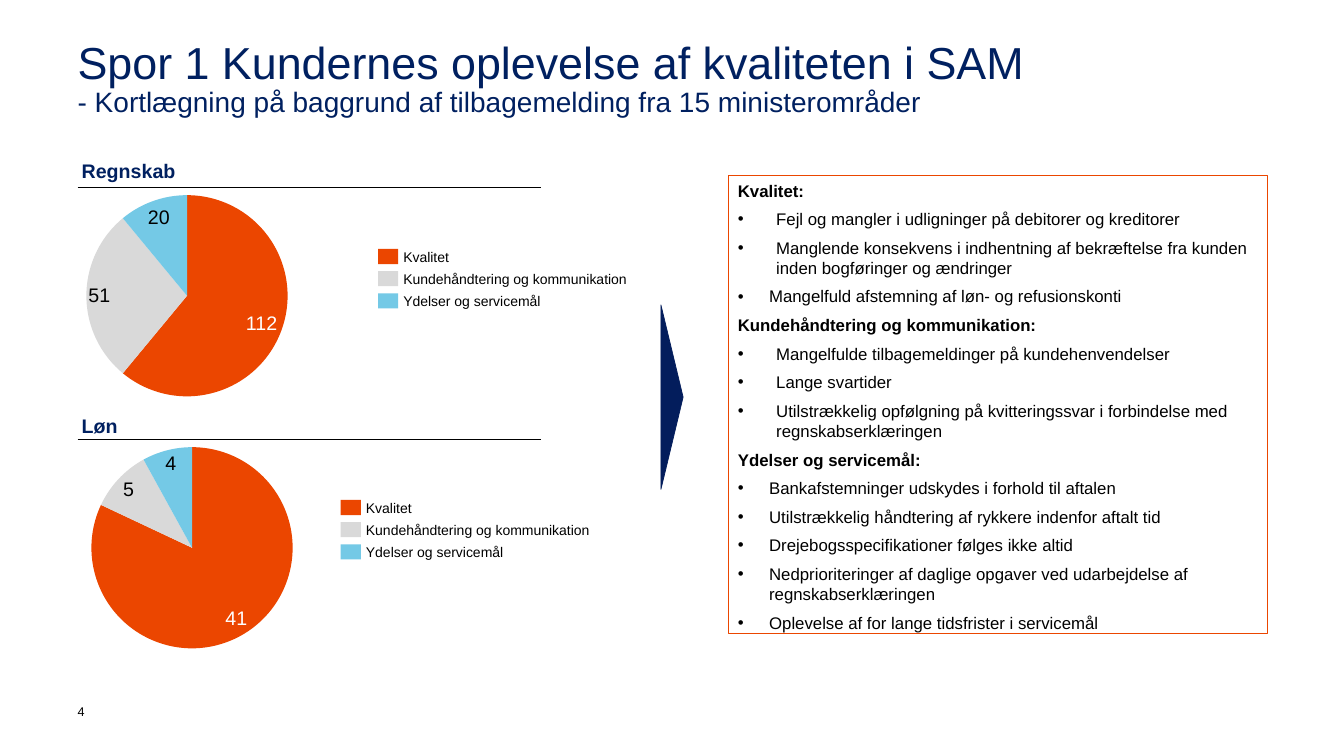
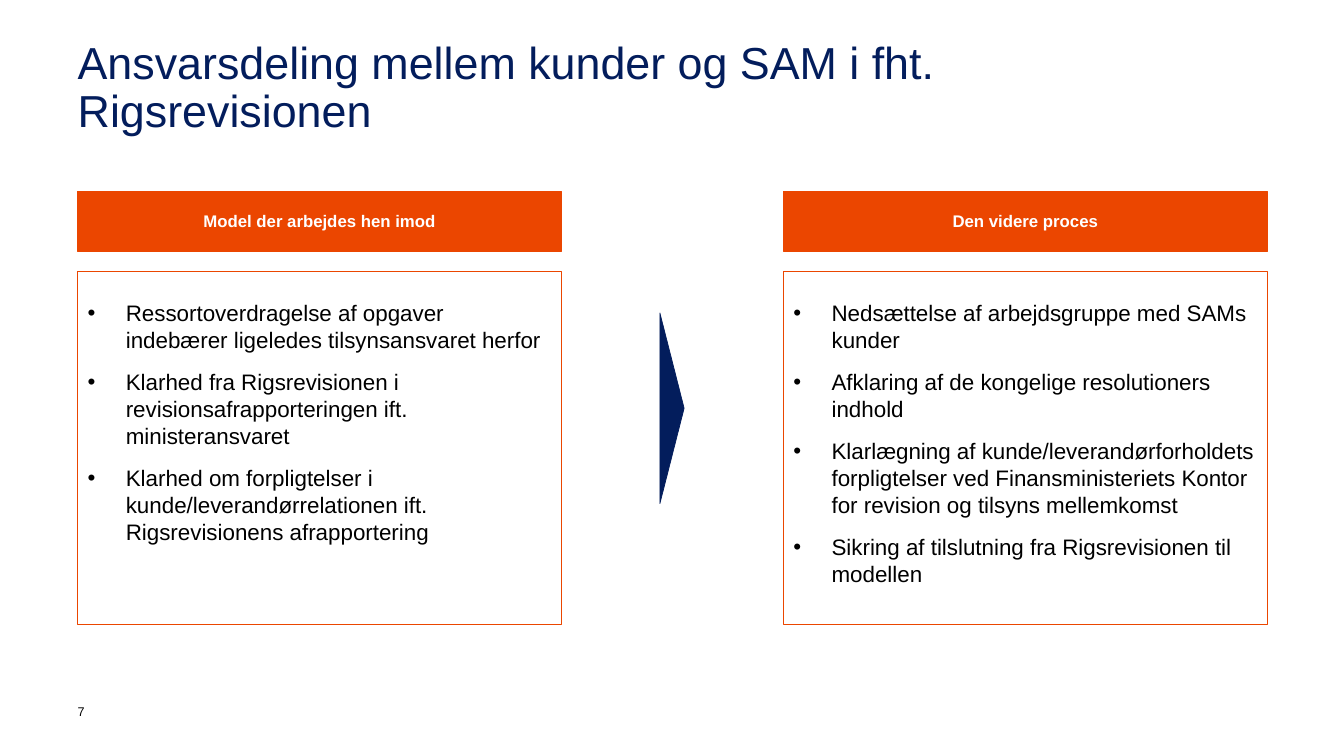
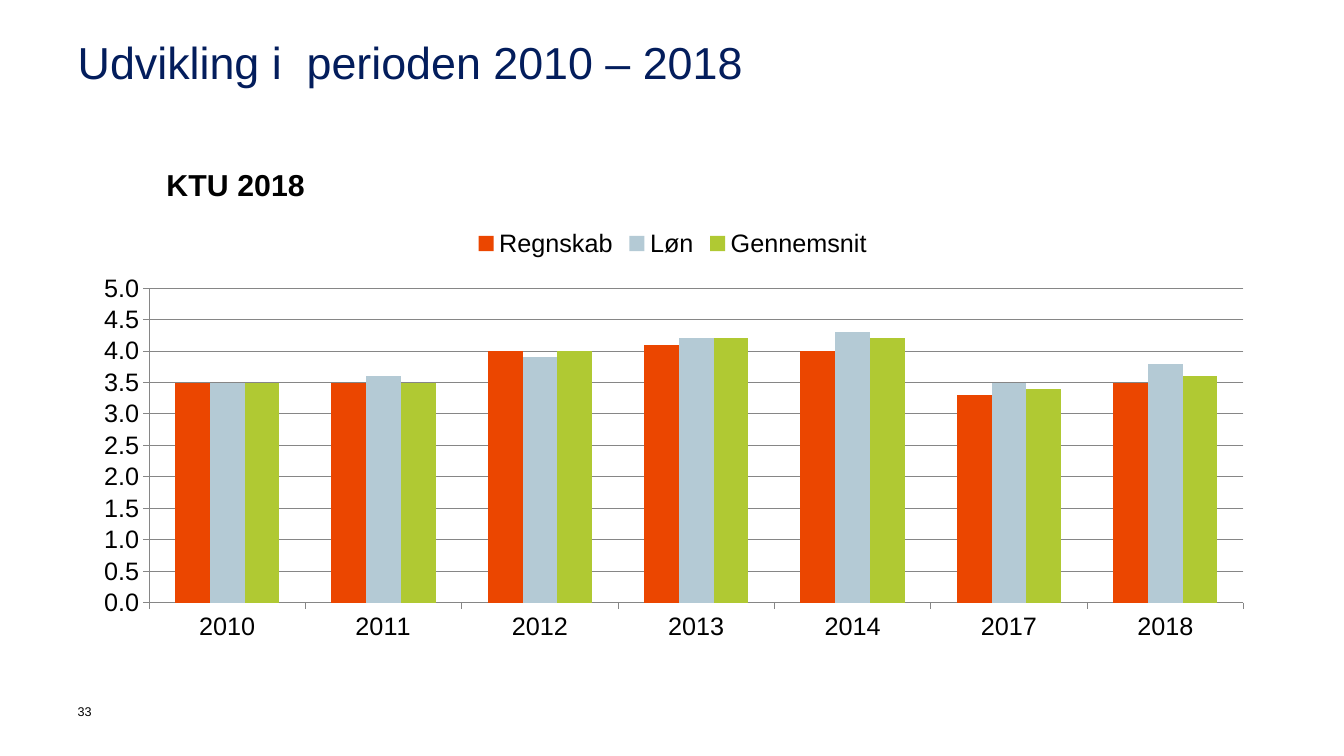
import pptx
import pptx.chart.data
import pptx.dml.color
import pptx.enum.chart
import pptx.enum.shapes
import pptx.enum.text
import pptx.oxml
import pptx.oxml.ns
import pptx.util
from lxml import etree

THEME = {
    "font": "Arial",
    "navy": "031D5C", "heading": "002060", "orange": "EB4600", "grey": "D9D9D9",
    "sky": "74C9E6", "steel": "B4CAD5", "green": "B0C933", "grid": "868686",
    "black": "000000", "white": "FFFFFF",
    "title": 32, "subtitle": 20, "chart_title": 21.6, "chart": 18, "body": 16,
    "label": 14, "panel": 12, "legend": 10, "number": 9, "hairline": 0.5,
}
SLIDE_W, SLIDE_H = 13.33, 7.5
LEFT, CONTENT_W = 0.77, 11.8
RIGHT = LEFT + CONTENT_W
COLUMN_W = 4.8
PIE_SIZE = 2.17
LEGEND_PITCH = 0.22
WIDE, NARROW = 0.38, 0.31

QUALITY = {
    "number": "4",
    "title": "Spor 1 Kundernes oplevelse af kvaliteten i SAM",
    "subtitle": "- Kortlægning på baggrund af tilbagemelding fra 15 ministerområder",
    "legend": [("Kvalitet", "orange"), ("Kundehåndtering og kommunikation", "grey"),
               ("Ydelser og servicemål", "sky")],
    "pies": [
        {"name": "Regnskab", "name_y": 1.58, "rule_y": 1.86, "at": (0.77, 1.85),
         "legend_at": (3.75, 2.47), "shares": (61, 28, 11),
         "labels": [("112", 0.74, 0.27, "white"), ("51", -0.87, -0.01, "black"),
                    ("20", -0.28, -0.79, "black")]},
        {"name": "Løn", "name_y": 4.11, "rule_y": 4.36, "at": (0.82, 4.35),
         "legend_at": (3.38, 4.96), "shares": (82, 10, 8),
         "labels": [("41", 0.44, 0.69, "white"), ("5", -0.63, -0.59, "black"),
                    ("4", -0.21, -0.84, "black")]},
    ],
    "findings": [
        ("Kvalitet:", [
            (WIDE, "Fejl og mangler i udligninger på debitorer og kreditorer"),
            (WIDE, "Manglende konsekvens i indhentning af bekræftelse fra kunden inden bogføringer og ændringer"),
            (NARROW, "Mangelfuld afstemning af løn- og refusionskonti")]),
        ("Kundehåndtering og kommunikation:", [
            (WIDE, "Mangelfulde tilbagemeldinger på kundehenvendelser"),
            (WIDE, "Lange svartider"),
            (WIDE, "Utilstrækkelig opfølgning på kvitteringssvar i forbindelse med regnskabserklæringen")]),
        ("Ydelser og servicemål:", [
            (NARROW, "Bankafstemninger udskydes i forhold til aftalen"),
            (NARROW, "Utilstrækkelig håndtering af rykkere indenfor aftalt tid"),
            (NARROW, "Drejebogsspecifikationer følges ikke altid"),
            (NARROW, "Nedprioriteringer af daglige opgaver ved udarbejdelse af regnskabserklæringen"),
            (NARROW, "Oplevelse af for lange tidsfrister i servicemål")]),
    ],
}
RESPONSIBILITY = {
    "number": "7",
    "title": "Ansvarsdeling mellem kunder og SAM i fht. Rigsrevisionen",
    "columns": [
        ("Model der arbejdes hen imod", [
            "Ressortoverdragelse af opgaver indebærer ligeledes tilsynsansvaret herfor",
            "Klarhed fra Rigsrevisionen i revisionsafrapporteringen ift. ministeransvaret",
            "Klarhed om forpligtelser i kunde/leverandørrelationen ift. Rigsrevisionens afrapportering"]),
        ("Den videre proces", [
            "Nedsættelse af arbejdsgruppe med SAMs kunder",
            "Afklaring af de kongelige resolutioners indhold",
            "Klarlægning af kunde/leverandørforholdets forpligtelser ved Finansministeriets Kontor for revision og tilsyns mellemkomst",
            "Sikring af tilslutning fra Rigsrevisionen til modellen"]),
    ],
}
TREND = {
    "number": "33",
    "title": "Udvikling i  perioden 2010 – 2018",
    "chart_title": "KTU 2018",
    "years": ["2010", "2011", "2012", "2013", "2014", "2017", "2018"],
    "series": [
        ("Regnskab", "orange", (3.5, 3.5, 4, 4.1, 4, 3.3, 3.5)),
        ("Løn", "steel", (3.5, 3.6, 3.9, 4.2, 4.3, 3.5, 3.8)),
        ("Gennemsnit", "green", (3.5, 3.5, 4, 4.2, 4.2, 3.4, 3.6)),
    ],
}

ALIGN = pptx.enum.text.PP_ALIGN
ANCHOR = pptx.enum.text.MSO_ANCHOR
SHAPE = pptx.enum.shapes.MSO_SHAPE
CHART = pptx.enum.chart.XL_CHART_TYPE
qn = pptx.oxml.ns.qn


def inches(*values):
    return [pptx.util.Inches(v) for v in values]


def rgb(name):
    return pptx.dml.color.RGBColor.from_string(THEME[name])


def set_font(font, size, color="black", bold=False):
    font.name = THEME["font"]
    font.size = pptx.util.Pt(THEME[size])
    font.bold = bold
    font.color.rgb = rgb(color)


def write(tf, paragraphs, size="body", color="black", bold=False, align=ALIGN.LEFT,
          anchor=ANCHOR.TOP, insets=(0, 0, 0, 0), space=0, hang=0):
    tf.word_wrap = True
    tf.vertical_anchor = anchor
    tf.margin_left, tf.margin_top, tf.margin_right, tf.margin_bottom = inches(*insets)
    for i, item in enumerate(paragraphs):
        text, own = item if isinstance(item, tuple) else (item, {})
        p = tf.paragraphs[0] if i == 0 else tf.add_paragraph()
        p.alignment = align
        if i and space:
            p.space_before = pptx.util.Pt(space)
        indent = own.get("hang", hang)
        if indent:
            pPr = p._p.get_or_add_pPr()
            pPr.set("marL", str(pptx.util.Inches(indent)))
            pPr.set("indent", str(-pptx.util.Inches(indent)))
            etree.SubElement(pPr, qn("a:buFont"), typeface=THEME["font"])
            etree.SubElement(pPr, qn("a:buChar"), char="•")
        r = p.add_run()
        r.text = text
        set_font(r.font, size, color, own.get("bold", bold))


def add_text(s, box, text, **fmt):
    write(s.shapes.add_textbox(*inches(*box)).text_frame, [text], **fmt)


def add_box(s, box, fill=None, line=None, kind=SHAPE.RECTANGLE):
    sp = s.shapes.add_shape(kind, *inches(*box))
    sp.shadow.inherit = False
    if fill:
        sp.fill.solid()
        sp.fill.fore_color.rgb = rgb(fill)
    else:
        sp.fill.background()
    if line:
        sp.line.color.rgb = rgb(line)
        sp.line.width = pptx.util.Pt(THEME["hairline"])
    else:
        sp.line.fill.background()
    return sp


def add_rule(s, x, y, width):
    cx = s.shapes.add_connector(pptx.enum.shapes.MSO_CONNECTOR.STRAIGHT,
                                *inches(x, y, x + width, y))
    cx.line.color.rgb = rgb("black")
    cx.line.width = pptx.util.Pt(THEME["hairline"])
    etree.SubElement(cx._element.spPr, qn("a:effectLst"))


def add_pointer(s, center_y, length, depth):
    box = (SLIDE_W / 2 - length / 2, center_y - depth / 2, length, depth)
    sp = add_box(s, box, "navy", "navy", SHAPE.ISOSCELES_TRIANGLE)
    sp.rotation = 90


def place(element, index, **shares):
    layout = element.find(qn("c:layout"))
    if layout is None:
        layout = etree.Element(qn("c:layout"))
        element.insert(index, layout)
    manual = etree.SubElement(layout, qn("c:manualLayout"))
    if "w" in shares:
        etree.SubElement(manual, qn("c:layoutTarget"), val="inner")
    for side in "xy":
        etree.SubElement(manual, qn(f"c:{side}Mode"), val="edge")
    for side, share in shares.items():
        etree.SubElement(manual, qn(f"c:{side}"), val=str(share))


def add_chart(s, kind, box, categories, series, size):
    data = pptx.chart.data.CategoryChartData()
    data.categories = categories
    for name, values in series:
        data.add_series(name, values)
    chart = s.shapes.add_chart(kind, *inches(*box), data).chart
    chart.has_title = False
    chart.has_legend = False
    set_font(chart.font, size)
    return chart


def paint(part, color):
    part.format.fill.solid()
    part.format.fill.fore_color.rgb = rgb(color)


def new_slide(prs, content, color="navy"):
    s = prs.slides.add_slide(prs.slide_layouts[5])
    title = s.shapes.title
    title.left, title.top, title.width, title.height = inches(LEFT, 0.4, CONTENT_W, 1.02)
    tf = title.text_frame
    write(tf, [content["title"]], size="title", color=color, insets=(0, 0, 1.13, 0))
    tf.auto_size = pptx.enum.text.MSO_AUTO_SIZE.NONE
    p = tf.paragraphs[0]
    p.line_spacing = 0.9
    if "subtitle" in content:
        p.add_line_break()
        etree.SubElement(p._p[-1], qn("a:rPr"), sz=str(THEME["title"] * 100))
        r = p.add_run()
        r.text = content["subtitle"]
        set_font(r.font, "subtitle", color)
    add_text(s, (LEFT, 6.98, 0.31, 0.39), content["number"], size="number")
    return s


def add_pie(s, pie, legend):
    x, y = pie["at"]
    add_text(s, (LEFT + 0.04, pie["name_y"], 2, 0.24), pie["name"],
             size="label", color="heading", bold=True)
    add_rule(s, LEFT, pie["rule_y"], 4.6)
    chart = add_chart(s, CHART.PIE, (x, y, PIE_SIZE, PIE_SIZE), ["1", "2", "3"],
                      [("Series 1", pie["shares"])], "legend")
    place(chart._chartSpace.chart.plotArea, 0, x=0.04, y=0.04, w=0.92, h=0.92)
    points = chart.plots[0].series[0].points
    legend_x, legend_y = pie["legend_at"]
    for i, (name, color) in enumerate(legend):
        paint(points[i], color)
        row_y = legend_y + i * LEGEND_PITCH
        add_box(s, (legend_x, row_y, 0.2, 0.15), color)
        add_text(s, (legend_x + 0.25, row_y - 0.01, 2.5, 0.17), name,
                 size="legend", anchor=ANCHOR.MIDDLE)
    w, h = 0.5, 0.23
    for text, dx, dy, color in pie["labels"]:
        box = (x + PIE_SIZE / 2 + dx - w / 2, y + PIE_SIZE / 2 + dy - h / 2, w, h)
        add_text(s, box, text, size="label", color=color, align=ALIGN.CENTER,
                 anchor=ANCHOR.MIDDLE)


def quality_slide(prs):
    s = new_slide(prs, QUALITY, "heading")
    paragraphs = []
    for heading, points in QUALITY["findings"]:
        paragraphs.append((heading, {"bold": True}))
        paragraphs += [(text, {"hang": hang}) for hang, text in points]
    panel = add_box(s, (RIGHT - 5.35, 1.74, 5.35, 4.54), line="orange")
    write(panel.text_frame, paragraphs, size="panel", space=6,
          insets=(0.1, 0.05, 0.1, 0.05))
    for pie in QUALITY["pies"]:
        add_pie(s, pie, QUALITY["legend"])
    add_pointer(s, 3.94, 1.83, 0.22)


def responsibility_slide(prs):
    s = new_slide(prs, RESPONSIBILITY)
    for x, (heading, points) in zip((LEFT, RIGHT - COLUMN_W), RESPONSIBILITY["columns"]):
        header = add_box(s, (x, 1.9, COLUMN_W, 0.59), "orange", "orange")
        write(header.text_frame, [heading], size="panel", color="white", bold=True,
              align=ALIGN.CENTER, anchor=ANCHOR.MIDDLE, insets=(0.1, 0.05, 0.1, 0.05))
        body = add_box(s, (x, 2.69, COLUMN_W, 3.5), line="orange")
        write(body.text_frame, points, space=11, hang=WIDE, insets=(0.1, 0.28, 0.1, 0.05))
    add_pointer(s, 4.05, 1.89, 0.24)


def trend_slide(prs):
    s = new_slide(prs, TREND)
    chart = add_chart(s, CHART.COLUMN_CLUSTERED, (LEFT, 1.59, CONTENT_W, 4.88),
                      TREND["years"],
                      [(name, values) for name, _, values in TREND["series"]], "chart")
    plot = chart.plots[0]
    plot.gap_width = 150
    plot.overlap = 0
    plot.vary_by_categories = False
    for series, (_, color, _) in zip(plot.series, TREND["series"]):
        paint(series, color)
    chart.has_title = True
    r = chart.chart_title.text_frame.paragraphs[0].add_run()
    r.text = TREND["chart_title"]
    set_font(r.font, "chart_title", bold=True)
    title = chart.chart_title._element
    title.find(qn("c:overlay")).set("val", "1")
    place(title, 1, x=0.07, y=0)
    chart.has_legend = True
    chart.legend.position = pptx.enum.chart.XL_LEGEND_POSITION.TOP
    chart.legend.include_in_layout = False
    set_font(chart.legend.font, "chart")
    place(chart.legend._element, 1, x=0.33, y=0.13)
    place(chart._chartSpace.chart.plotArea, 0, x=0.06, y=0.26, w=0.92, h=0.64)
    values = chart.value_axis
    values.minimum_scale, values.maximum_scale, values.major_unit = 0, 5, 0.5
    values.has_major_gridlines = True
    values.tick_labels.number_format = "0.0"
    values.tick_labels.number_format_is_linked = False
    for axis in (values, chart.category_axis):
        axis.major_tick_mark = pptx.enum.chart.XL_TICK_MARK.OUTSIDE
        set_font(axis.tick_labels.font, "chart")
    for part in (values, chart.category_axis, values.major_gridlines):
        part.format.line.color.rgb = rgb("grid")
        part.format.line.width = pptx.util.Pt(0.75)


def main():
    prs = pptx.Presentation()
    prs.slide_width, prs.slide_height = inches(SLIDE_W, SLIDE_H)
    quality_slide(prs)
    responsibility_slide(prs)
    trend_slide(prs)
    prs.save("out.pptx")


if __name__ == "__main__":
    main()
